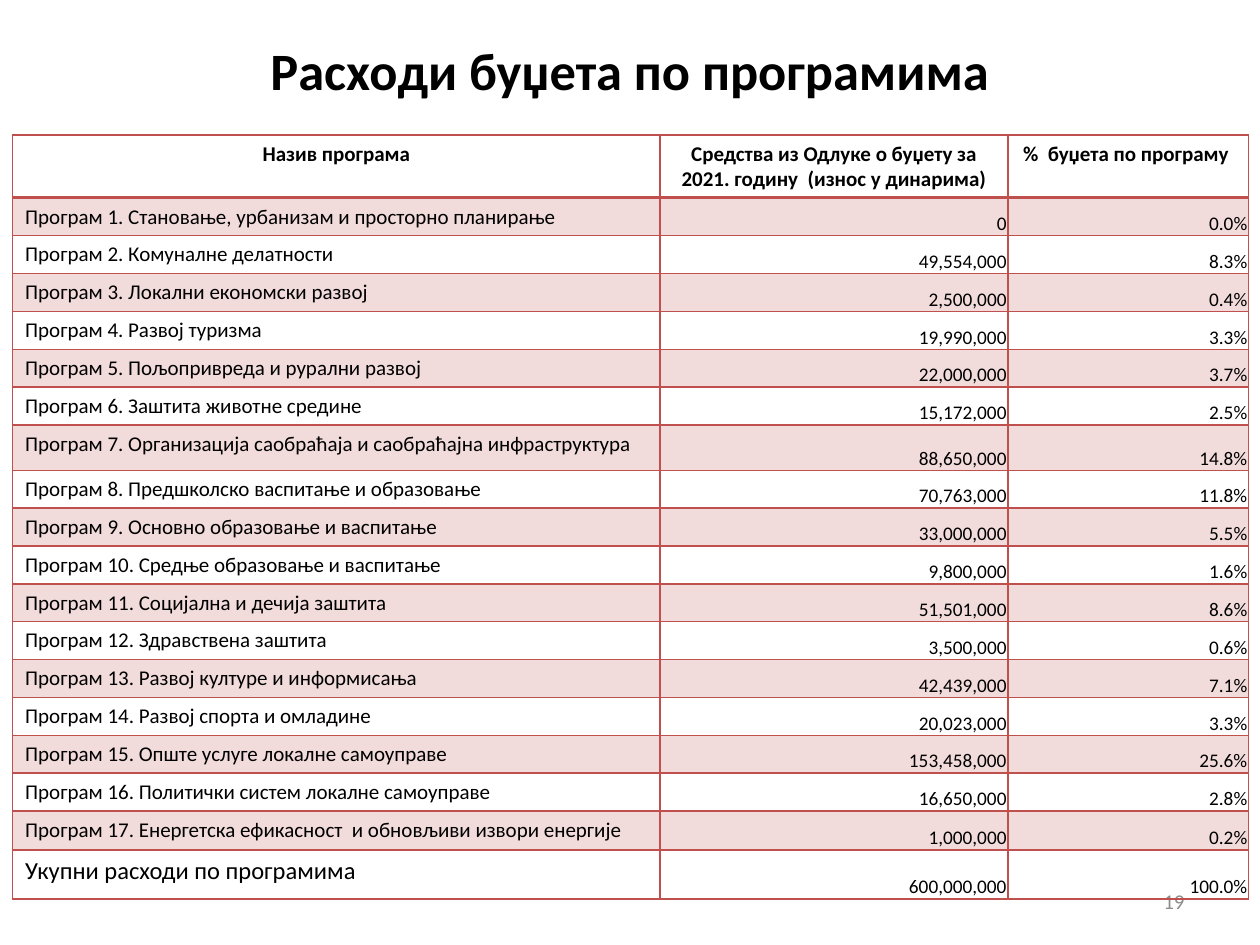
"""Build the slide with budget expenditure by programme."""
import lxml.etree
import pptx
import pptx.dml.color
import pptx.enum.text
import pptx.oxml.ns
import pptx.util

Inches = pptx.util.Inches
ALIGN = pptx.enum.text.PP_ALIGN
ANCHOR = pptx.enum.text.MSO_ANCHOR
RED = "C0504D"
HEADERS = [
    "Назив програма",
    "Средства из Одлуке о буџету за 2021. годину  (износ у динарима)",
    "%  буџета по програму ",
]
PROGRAMS = [
    ("Становање, урбанизам и просторно планирање", "0", "0.0%"),
    ("Комуналне делатности", "49,554,000", "8.3%"),
    ("Локални економски развој", "2,500,000", "0.4%"),
    ("Развој туризма", "19,990,000", "3.3%"),
    ("Пољопривреда и рурални развој", "22,000,000", "3.7%"),
    ("Заштита животне средине", "15,172,000", "2.5%"),
    ("Организација саобраћаја и саобраћајна инфраструктура", "88,650,000", "14.8%"),
    ("Предшколско васпитање и образовање", "70,763,000", "11.8%"),
    ("Основно образовање и васпитање", "33,000,000", "5.5%"),
    ("Средње образовање и васпитање", "9,800,000", "1.6%"),
    ("Социјална и дечија заштита", "51,501,000", "8.6%"),
    ("Здравствена заштита", "3,500,000", "0.6%"),
    ("Развој културе и информисања", "42,439,000", "7.1%"),
    ("Развој спорта и омладине", "20,023,000", "3.3%"),
    ("Опште услуге локалне самоуправе", "153,458,000", "25.6%"),
    ("Политички систем локалне самоуправе", "16,650,000", "2.8%"),
    ("Енергетска ефикасност  и обновљиви извори енергије", "1,000,000", "0.2%"),
]
TOTAL = ("Укупни расходи по програмима", "600,000,000", "100.0%")


def color(value):
    return pptx.dml.color.RGBColor.from_string(value)


def write(frame, text, size, align, bold=False, ink="000000"):
    frame.word_wrap = True
    paragraph = frame.paragraphs[0]
    paragraph.text = text
    paragraph.alignment = align
    paragraph.font.name = "Calibri"
    paragraph.font.size = pptx.util.Pt(size)
    paragraph.font.bold = bold
    paragraph.font.color.rgb = color(ink)


presentation = pptx.Presentation()
presentation.slide_width = Inches(10)
presentation.slide_height = Inches(7.5)
slide = presentation.slides.add_slide(presentation.slide_layouts[6])

title = slide.shapes.add_textbox(Inches(0.74), Inches(0.13), Inches(8.52), Inches(0.85))
title.text_frame.vertical_anchor = ANCHOR.MIDDLE
write(title.text_frame, "Расходи буџета по програмима", 30, ALIGN.CENTER, bold=True)

number = slide.shapes.add_textbox(Inches(7.17), Inches(6.95), Inches(2.33), Inches(0.4))
number.text_frame.vertical_anchor = ANCHOR.MIDDLE
write(number.text_frame, "19", 12, ALIGN.RIGHT, ink="8C8C8C")

rows = [HEADERS]
for index, (name, amount, share) in enumerate(PROGRAMS, 1):
    rows.append((f"Програм {index}. {name}", amount, share))
rows.append(TOTAL)
last = len(rows) - 1
heights = {0: 0.49, 7: 0.36, last - 1: 0.31, last: 0.39}

table = slide.shapes.add_table(
    len(rows), 3, Inches(0.1), Inches(1.07), Inches(9.8), Inches(6.06)
).table
for column, width in zip(table.columns, (5.14, 2.76, 1.91)):
    column.width = Inches(width)

for row_index, values in enumerate(rows):
    table.rows[row_index].height = Inches(heights.get(row_index, 0.29))
    for column_index, value in enumerate(values):
        cell = table.cell(row_index, column_index)
        if row_index == 0:
            write(cell.text_frame, value, 12, ALIGN.CENTER, bold=True)
        elif column_index == 0:
            write(cell.text_frame, value, 14 if row_index == last else 12, ALIGN.LEFT)
        else:
            write(cell.text_frame, value, 11, ALIGN.RIGHT)
            cell.vertical_anchor = ANCHOR.BOTTOM
            cell.margin_left = cell.margin_right = cell.margin_top = Inches(0.01)
            cell.margin_bottom = 0

        properties = cell._tc.get_or_add_tcPr()
        for side in "LRTB":
            thick = (row_index, side) in ((0, "B"), (1, "T"))
            line = lxml.etree.SubElement(
                properties,
                pptx.oxml.ns.qn(f"a:ln{side}"),
                w=str(pptx.util.Pt(2 if thick else 1)),
            )
            solid = lxml.etree.SubElement(line, pptx.oxml.ns.qn("a:solidFill"))
            lxml.etree.SubElement(solid, pptx.oxml.ns.qn("a:srgbClr"), val=RED)

        if row_index % 2:
            cell.fill.solid()
            cell.fill.fore_color.rgb = color(RED)
            tint = properties.find(pptx.oxml.ns.qn("a:solidFill"))[0]
            lxml.etree.SubElement(tint, pptx.oxml.ns.qn("a:alpha"), val="20000")
        else:
            cell.fill.background()

presentation.save("out.pptx")
